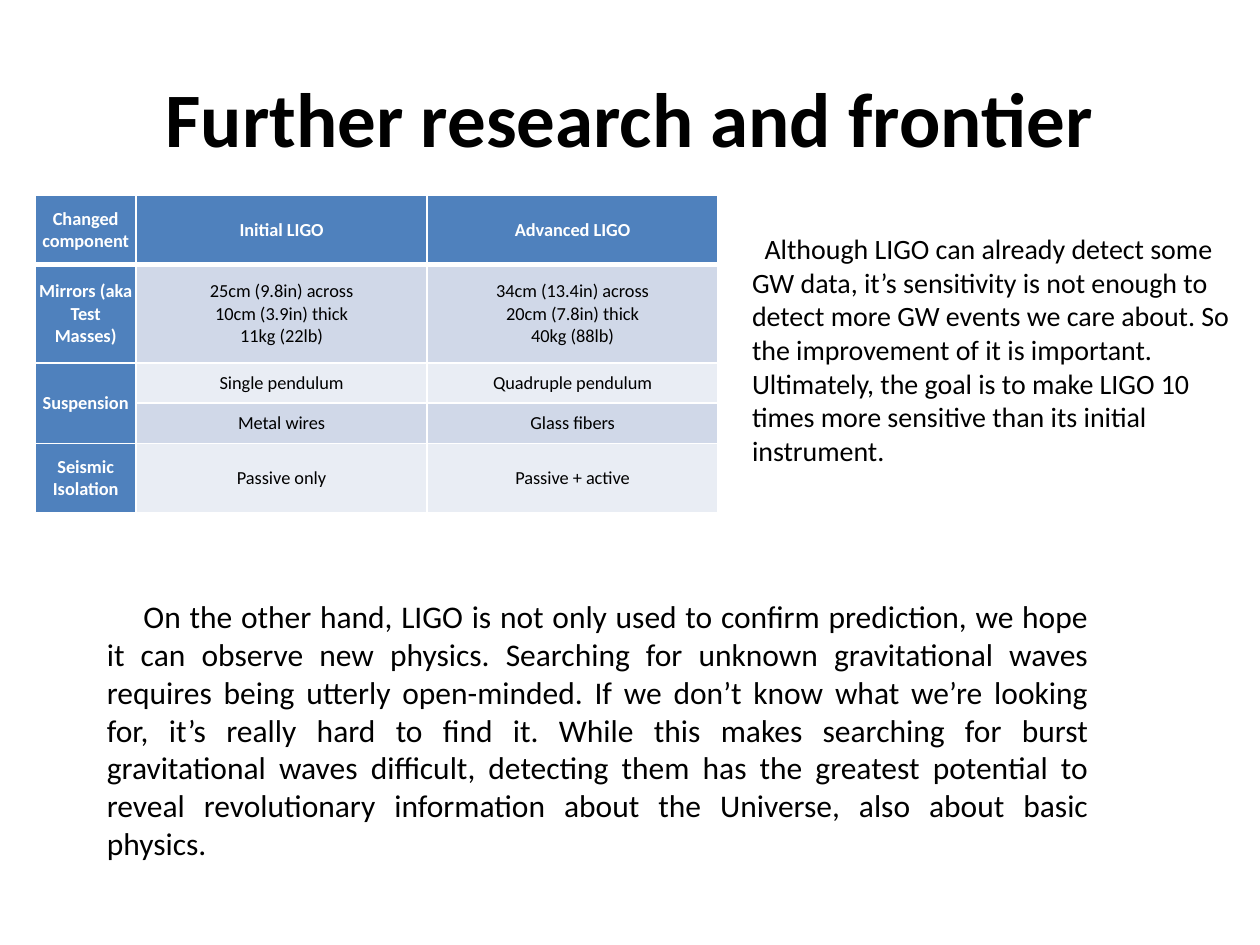
from lxml import etree
from pptx import Presentation
from pptx import util as u
from pptx.dml.color import RGBColor
from pptx.enum import text
from pptx.oxml import ns

WHITE, BLACK, BLUE = "FFFFFF", "000000", "4F81BD"
DARK_BAND, LIGHT_BAND = "D0D8E8", "E9EDF4"
CENTER = text.PP_ALIGN.CENTER


def color(hex_value):
    return RGBColor.from_string(hex_value)


def write(frame, content, size, ink=BLACK, bold=False, align=text.PP_ALIGN.LEFT,
          anchor=text.MSO_ANCHOR.TOP, indent=0, after=0):
    """Fill a text frame, one paragraph per line of content."""
    frame.word_wrap = True
    frame.vertical_anchor = anchor
    for i, line in enumerate(content.split("\n")):
        paragraph = frame.add_paragraph() if i else frame.paragraphs[0]
        paragraph.alignment = align
        paragraph.space_after = u.Pt(after)
        if indent:
            properties = paragraph._p.get_or_add_pPr()
            properties.set("marL", "0")
            properties.set("indent", str(u.Inches(indent)))
        run = paragraph.add_run()
        run.text = line
        run.font.name = "Calibri"
        run.font.size = u.Pt(size)
        run.font.bold = bold
        run.font.color.rgb = color(ink)


prs = Presentation()
prs.slide_width, prs.slide_height = u.Inches(10), u.Inches(7.5)
slide = prs.slides.add_slide(prs.slide_layouts[6])

# Title
title = slide.shapes.add_textbox(u.Inches(0.5), u.Inches(0.3), u.Inches(9), u.Inches(1.25))
write(title.text_frame, "Further research and frontier", 44, bold=True,
      align=CENTER, anchor=text.MSO_ANCHOR.MIDDLE)

# Comparison table
upgrades = [
    ("Changed component", "Initial LIGO", "Advanced LIGO"),
    ("Mirrors (aka Test Masses)",
     "25cm (9.8in) across\n10cm (3.9in) thick\n11kg (22lb)",
     "34cm (13.4in) across\n20cm (7.8in) thick\n40kg (88lb)"),
    ("Suspension", "Single pendulum", "Quadruple pendulum"),
    ("", "Metal wires", "Glass fibers"),
    ("Seismic Isolation", "Passive only", "Passive + active"),
]
column_widths = [0.8, 2.31, 2.31]
row_heights = [0.55, 0.78, 0.32, 0.32, 0.55]
comparison = slide.shapes.add_table(
    len(row_heights), len(column_widths), u.Inches(0.28), u.Inches(1.55),
    u.Inches(sum(column_widths)), u.Inches(sum(row_heights))).table
comparison.first_col = True
for column, width in zip(comparison.columns, column_widths):
    column.width = u.Inches(width)
for row, height in zip(comparison.rows, row_heights):
    row.height = u.Inches(height)
comparison.cell(2, 0).merge(comparison.cell(3, 0))

for r, entries in enumerate(upgrades):
    for c, entry in enumerate(entries):
        cell = comparison.cell(r, c)
        heading = r == 0 or c == 0
        cell.margin_left = cell.margin_right = u.Inches(0.03)
        cell.margin_top = cell.margin_bottom = u.Inches(0.03)

        # White borders, thicker under the header row
        cell_properties = cell._tc.get_or_add_tcPr()
        for side in ("L", "R", "T", "B"):
            under_header = (r, side) in ((0, "B"), (1, "T"))
            border = etree.SubElement(cell_properties, ns.qn("a:ln" + side),
                                      w=str(u.Pt(3 if under_header else 1)))
            line_fill = etree.SubElement(border, ns.qn("a:solidFill"))
            etree.SubElement(line_fill, ns.qn("a:srgbClr"), val=WHITE)

        cell.fill.solid()
        band = DARK_BAND if r % 2 else LIGHT_BAND
        cell.fill.fore_color.rgb = color(BLUE if heading else band)
        if entry:
            write(cell.text_frame, entry, 10.5, ink=WHITE if heading else BLACK,
                  bold=heading, align=CENTER, after=6.8 if r == 3 else 0)
        cell.vertical_anchor = text.MSO_ANCHOR.MIDDLE

# Sensitivity goal beside the table
goal = slide.shapes.add_textbox(u.Inches(5.87), u.Inches(1.79), u.Inches(4.02), u.Inches(1.99))
write(goal.text_frame,
      "Although LIGO can already detect some GW data, it’s sensitivity is not enough to "
      "detect more GW events we care about. So the improvement of it is important. "
      "Ultimately, the goal is to make LIGO 10 times more sensitive than its initial "
      "instrument.", 16, indent=0.1)

# Outlook on new physics
outlook = slide.shapes.add_textbox(u.Inches(0.75), u.Inches(4.69), u.Inches(7.99), u.Inches(1.92))
write(outlook.text_frame,
      "On the other hand, LIGO is not only used to confirm prediction, we hope it can "
      "observe new physics. Searching for unknown gravitational waves requires being "
      "utterly open-minded. If we don’t know what we’re looking for, it’s really hard to "
      "find it. While this makes searching for burst gravitational waves difficult, "
      "detecting them has the greatest potential to reveal revolutionary information "
      "about the Universe, also about basic physics.",
      18, align=text.PP_ALIGN.JUSTIFY, indent=0.29)

prs.save("out.pptx")
